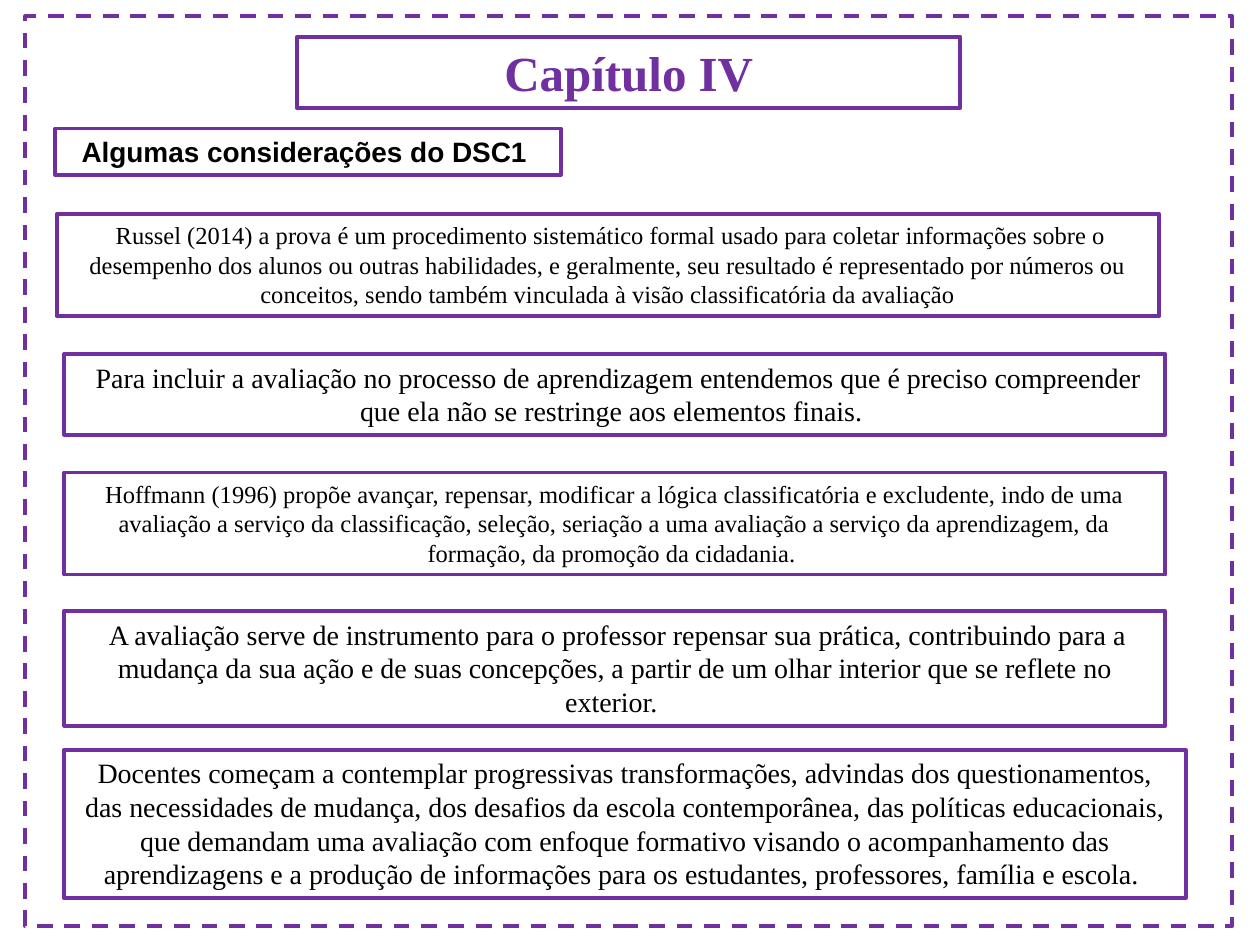
import pptx
import pptx.util
import pptx.dml.color
import pptx.enum.dml
import pptx.enum.shapes
import pptx.enum.text

Inches, Pt = pptx.util.Inches, pptx.util.Pt
PURPLE = pptx.dml.color.RGBColor(0x70, 0x30, 0xA0)
BLACK = pptx.dml.color.RGBColor(0, 0, 0)
WHITE = pptx.dml.color.RGBColor(0xFF, 0xFF, 0xFF)
SERIF, SANS = "Times New Roman", "Arial"


def outline(sp):
    sp.line.color.rgb = PURPLE
    sp.line.width = Pt(2.25)


def write(sp, text, size, font, color=BLACK, bold=False):
    outline(sp)
    tf = sp.text_frame
    tf.word_wrap = True
    tf.auto_size = pptx.enum.text.MSO_AUTO_SIZE.NONE
    tf.vertical_anchor = pptx.enum.text.MSO_ANCHOR.TOP
    p = tf.paragraphs[0]
    p.text = text
    p.alignment = pptx.enum.text.PP_ALIGN.CENTER
    p.font.size = Pt(size)
    p.font.name = font
    p.font.bold = bold
    p.font.color.rgb = color


prs = pptx.Presentation()
prs.slide_width, prs.slide_height = Inches(10), Inches(7.5)
s = prs.slides.add_slide(prs.slide_layouts[5])

# Title
title = s.shapes.title
title.left, title.top = Inches(2.36), Inches(0.29)
title.width, title.height = Inches(5.26), Inches(0.57)
write(title, "Capítulo IV", 28, SERIF, PURPLE, True)

# Dashed frame, behind everything else
frame = s.shapes.add_shape(pptx.enum.shapes.MSO_SHAPE.RECTANGLE,
                           Inches(0.2), Inches(0.13), Inches(9.58), Inches(7.22))
frame.shadow.inherit = False
frame.fill.solid()
frame.fill.fore_color.rgb = WHITE
outline(frame)
frame.line.dash_style = pptx.enum.dml.MSO_LINE.DASH
title.element.addprevious(frame.element)

# Section heading
heading = s.shapes.add_textbox(Inches(0.44), Inches(1.02), Inches(4.01), Inches(0.37))
write(heading, "Algumas considerações do DSC1 ", 16, SANS, bold=True)

# Considerations: left, top, width, height, text size, text
considerations = [
    (0.45, 1.7, 8.75, 0.81, 14,
     " Russel (2014) a prova é um procedimento sistemático formal usado para coletar "
     "informações sobre o desempenho dos alunos ou outras habilidades, e geralmente, seu "
     "resultado é representado por números ou conceitos, sendo também vinculada à visão "
     "classificatória da avaliação"),
    (0.51, 2.81, 8.74, 0.64, 16,
     " Para incluir a avaliação no processo de aprendizagem entendemos que é preciso "
     "compreender que ela não se restringe aos elementos finais. "),
    (0.51, 3.75, 8.74, 0.81, 14,
     "Hoffmann (1996) propõe avançar, repensar, modificar a lógica classificatória e "
     "excludente, indo de uma avaliação a serviço da classificação, seleção, seriação a uma "
     "avaliação a serviço da aprendizagem, da formação, da promoção da cidadania. "),
    (0.51, 4.85, 8.74, 0.91, 16,
     " A avaliação serve de instrumento para o professor repensar sua prática, contribuindo "
     "para a mudança da sua ação e de suas concepções, a partir de um olhar interior que se "
     "reflete no exterior. "),
    (0.51, 5.95, 8.9, 1.18, 16,
     "Docentes começam a contemplar progressivas transformações, advindas dos "
     "questionamentos, das necessidades de mudança, dos desafios da escola contemporânea, "
     "das políticas educacionais, que demandam uma avaliação com enfoque formativo visando "
     "o acompanhamento das aprendizagens e a produção de informações para os estudantes, "
     "professores, família e escola. "),
]
for left, top, width, height, size, text in considerations:
    sp = s.shapes.add_textbox(Inches(left), Inches(top), Inches(width), Inches(height))
    write(sp, text, size, SERIF)

prs.save("out.pptx")
